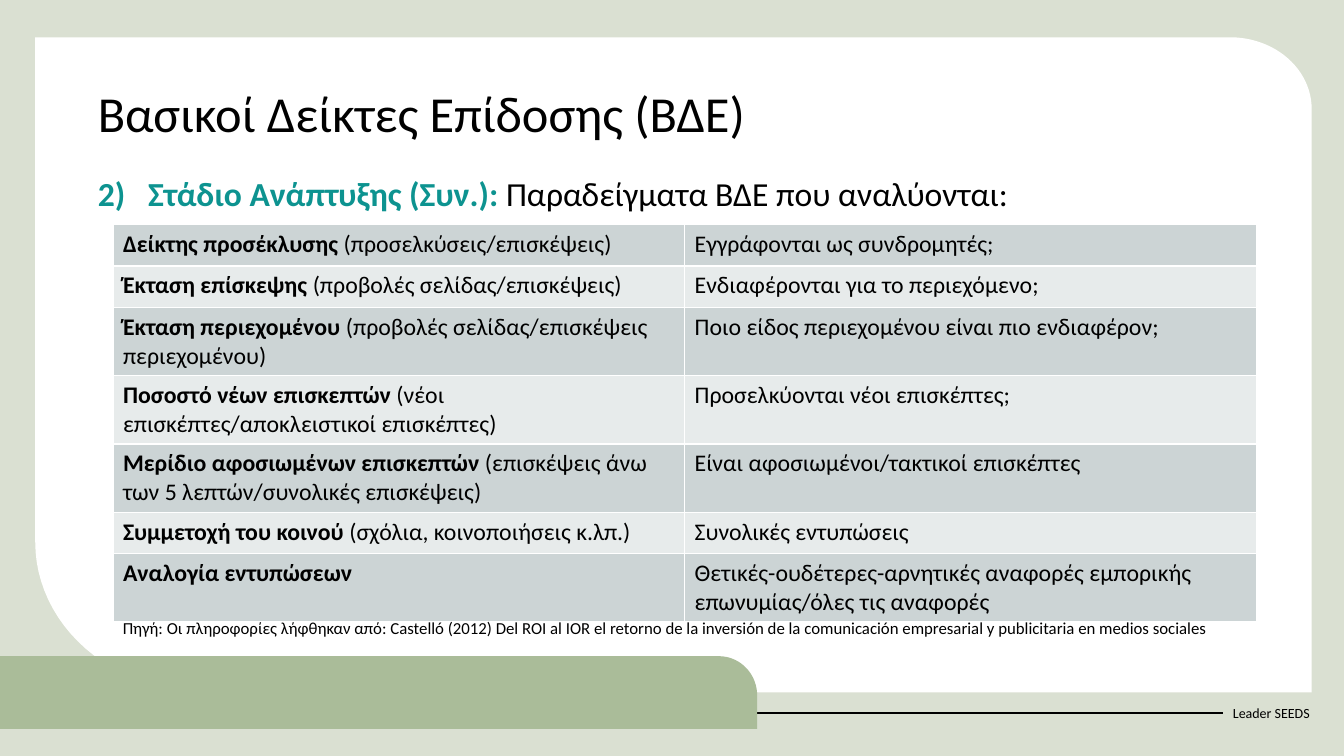
from dataclasses import dataclass
from math import cos, pi, sin
from typing import NamedTuple

from lxml.etree import SubElement as Sub
from pptx import Presentation
from pptx.dml.color import RGBColor as Rgb
from pptx.enum.shapes import MSO_CONNECTOR as Link
from pptx.enum.text import MSO_ANCHOR as Anchor, MSO_AUTO_SIZE as Fit, PP_ALIGN as Align
from pptx.oxml.ns import qn
from pptx.util import Inches, Pt


@dataclass(frozen=True)
class Theme:
    font: str = "Calibri"
    ink: str = "000000"
    white: str = "FFFFFF"
    accent: str = "0D9390"
    sage: str = "DAE0D2"
    green: str = "AABC99"
    bands: tuple[str, str] = ("CCD4D5", "E7EBEB")
    title: int = 36
    lead: int = 24
    cell: int = 17
    source: int = 12
    footer: int = 10


class Box(NamedTuple):
    left: float
    top: float
    width: float
    height: float


class Arc(NamedTuple):
    """Quarter ellipse between two points, rounding off a corner."""
    start: tuple[float, float]
    end: tuple[float, float]
    corner: tuple[float, float]


@dataclass(frozen=True)
class Metric:
    name: str
    ratio: str
    note: str


THEME = Theme()
METRICS = [
    Metric("Δείκτης προσέκλυσης ", "(προσελκύσεις/επισκέψεις)", "Εγγράφονται ως συνδρομητές;"),
    Metric("Έκταση επίσκεψης ", "(προβολές σελίδας/επισκέψεις)",
           "Ενδιαφέρονται για το περιεχόμενο;"),
    Metric("Έκταση περιεχομένου ", "(προβολές σελίδας/επισκέψεις περιεχομένου)",
           "Ποιο είδος περιεχομένου είναι πιο ενδιαφέρον;"),
    Metric("Ποσοστό νέων επισκεπτών ", "(νέοι επισκέπτες/αποκλειστικοί επισκέπτες)",
           "Προσελκύονται νέοι επισκέπτες;"),
    Metric("Μερίδιο αφοσιωμένων επισκεπτών ",
           "(επισκέψεις άνω των 5 λεπτών/συνολικές επισκέψεις)",
           "Είναι αφοσιωμένοι/τακτικοί επισκέπτες"),
    Metric("Συμμετοχή του κοινού ", "(σχόλια, κοινοποιήσεις κ.λπ.)", "Συνολικές εντυπώσεις"),
    Metric("Αναλογία εντυπώσεων", "",
           "Θετικές-ουδέτερες-αρνητικές αναφορές εμπορικής επωνυμίας/όλες τις αναφορές"),
]


def write(para, text: str, *, size: int, color: str = THEME.ink, bold: bool = False) -> None:
    run = para.add_run()
    run.text = text
    font = run.font
    font.name, font.size, font.bold = THEME.font, Pt(size), bold
    font.color.rgb = Rgb.from_string(color)


def place(shape, box: Box) -> None:
    shape.left, shape.top, shape.width, shape.height = map(Inches, box)


def head(slide, shape, box: Box):
    """Move a placeholder to the front and return its first paragraph."""
    slide.shapes.element.append(shape.element)
    place(shape, box)
    frame = shape.text_frame
    frame.auto_size, frame.vertical_anchor = Fit.NONE, Anchor.TOP
    para = frame.paragraphs[0]
    para.alignment, para.line_spacing, para.space_before = Align.LEFT, 0.9, Pt(0)
    return para


def label(slide, text: str, box: Box, size: int, anchor=Anchor.TOP) -> None:
    frame = slide.shapes.add_textbox(*map(Inches, box)).text_frame
    frame.word_wrap, frame.vertical_anchor = True, anchor
    write(frame.paragraphs[0], text, size=size)


def trace(arc: Arc, steps: int = 24) -> list[tuple[float, float]]:
    mid = [s + e - c for s, e, c in zip(*arc)]
    turns = [pi / 2 * i / steps for i in range(steps + 1)]
    return [tuple(m + (s - m) * cos(t) + (e - m) * sin(t)
                  for s, e, m in zip(arc.start, arc.end, mid)) for t in turns]


def panel(slide, parts: list, color: str) -> None:
    spots = []
    for part in parts:
        spots += trace(part) if isinstance(part, Arc) else [part]
    spots = [(Inches(x), Inches(y)) for x, y in spots]
    pen = slide.shapes.build_freeform(*spots[0])
    pen.add_line_segments(spots[1:], close=True)
    shape = pen.convert_to_shape()
    shape.shadow.inherit = False
    shape.fill.solid()
    shape.fill.fore_color.rgb = Rgb.from_string(color)
    shape.line.fill.background()


def rule(slide, left: float, right: float, top: float) -> None:
    line = slide.shapes.add_connector(
        Link.STRAIGHT, Inches(left), Inches(top), Inches(right), Inches(top))
    line.line.color.rgb = Rgb.from_string(THEME.ink)
    line.line.width = Pt(1.5)
    Sub(line.element.spPr, qn("a:effectLst"))


def number(para, start: int) -> None:
    props = para._p.get_or_add_pPr()
    props.set("marL", str(Inches(0.5)))
    props.set("indent", str(-Inches(0.5)))
    Sub(Sub(props, qn("a:buClr")), qn("a:srgbClr"), val=THEME.accent)
    Sub(props, qn("a:buFont"), typeface="+mj-lt")
    Sub(props, qn("a:buAutoNum"), type="arabicParenR", startAt=str(start))


def paint(cell, color: str) -> None:
    props = cell._tc.get_or_add_tcPr()
    for side in ("lnL", "lnR", "lnT", "lnB"):
        edge = Sub(props, qn(f"a:{side}"), w=str(Pt(1)))
        Sub(Sub(edge, qn("a:solidFill")), qn("a:srgbClr"), val=THEME.white)
    cell.fill.solid()
    cell.fill.fore_color.rgb = Rgb.from_string(color)


def grid(slide, metrics: list[Metric], box: Box) -> None:
    table = slide.shapes.add_table(len(metrics), 2, *map(Inches, box)).table
    table.first_row = table.horz_banding = False
    for i, metric in enumerate(metrics):
        table.rows[i].height = Inches(0.41)
        left, right = table.rows[i].cells
        for cell in (left, right):
            paint(cell, THEME.bands[i % 2])
        para = left.text_frame.paragraphs[0]
        write(para, metric.name, size=THEME.cell, bold=True)
        if metric.ratio:
            write(para, metric.ratio, size=THEME.cell)
        write(right.text_frame.paragraphs[0], metric.note, size=THEME.cell)


def main() -> None:
    deck = Presentation()
    deck.slide_width, deck.slide_height = Inches(13.33), Inches(7.5)
    slide = deck.slides.add_slide(deck.slide_layouts[1])
    title, body = slide.placeholders

    # Backdrop
    slide.background.fill.solid()
    slide.background.fill.fore_color.rgb = Rgb.from_string(THEME.sage)
    panel(slide, [(0.35, 0.37), Arc((12.2, 0.37), (13.01, 1.08), (13.01, 0.37)),
                  (13.01, 6.87), Arc((2.05, 6.87), (0.35, 5.38), (0.35, 6.87))], THEME.white)

    # Footer
    label(slide, "Leader SEEDS", Box(12.13, 6.87, 1.01, 0.4), THEME.footer, Anchor.MIDDLE)
    rule(slide, 0, 12.13, 7.07)
    panel(slide, [(0, 7.23), (0, 6.51), Arc((7.13, 6.51), (7.51, 6.9), (7.51, 6.51)),
                  (7.51, 7.23)], THEME.green)

    # Title and numbered lead
    para = head(slide, body, Box(0.87, 1.71, 11.59, 4.07))
    number(para, 2)
    write(para, "Στάδιο Ανάπτυξης (Συν.): ", size=THEME.lead, color=THEME.accent, bold=True)
    write(para, "Παραδείγματα ΒΔΕ που αναλύονται:", size=THEME.lead)
    para = head(slide, title, Box(0.87, 0.83, 11.59, 0.88))
    write(para, "Βασικοί Δείκτες Επίδοσης (ΒΔΕ)", size=THEME.title)

    # Indicators and their source
    grid(slide, METRICS, Box(1.12, 2.23, 11.34, 2.87))
    label(slide, "Πηγή: Οι πληροφορίες λήφθηκαν από: Castelló (2012) Del ROI al IOR el retorno "
          "de la inversión de la comunicación empresarial y publicitaria en medios sociales",
          Box(1.12, 6.08, 11.34, 0.3), THEME.source)
    deck.save("out.pptx")


if __name__ == "__main__":
    main()
